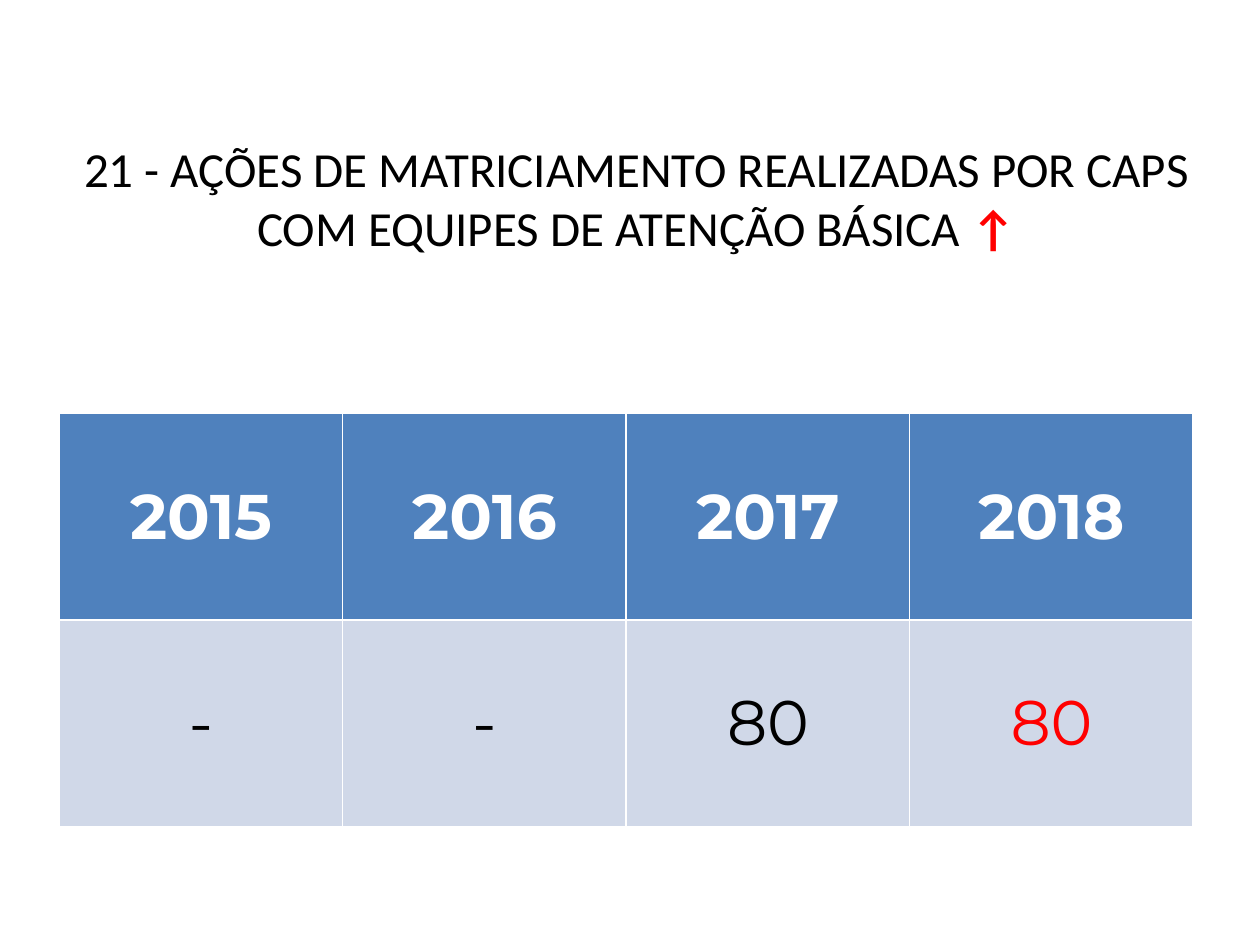
from pptx import Presentation
from pptx.dml.color import RGBColor
from pptx.enum.text import MSO_ANCHOR, PP_ALIGN
from pptx.util import Inches, Pt

BLACK, WHITE, RED = "000000", "FFFFFF", "FF0000"
HEADER_FILL, VALUE_FILL = "4F81BD", "D0D8E8"
YEARS = ["2015", "2016", "2017", "2018"]
ACTIONS = ["-", "-", "80", "80"]


def rgb(color):
    """Turn a hex string into a colour."""
    return RGBColor.from_string(color)


def format_run(run, font_name, size, color, bold=False):
    """Set the font of a run."""
    run.font.name = font_name
    run.font.size = Pt(size)
    run.font.bold = bold
    run.font.color.rgb = rgb(color)


def add_title(slide, indicator, trend):
    """Place the indicator name, followed by its trend arrow, in the title."""
    title = slide.shapes.title
    title.left, title.top = Inches(0.55), Inches(0.16)
    title.width, title.height = Inches(9), Inches(2.81)
    frame = title.text_frame
    frame.word_wrap = True
    frame.vertical_anchor = MSO_ANCHOR.MIDDLE
    paragraph = frame.paragraphs[0]
    paragraph.alignment = PP_ALIGN.CENTER
    for words, color, bold in ((indicator, BLACK, False), (trend, RED, True)):
        run = paragraph.add_run()
        run.text = words
        format_run(run, "Calibri", 28, color, bold)


def fill_cell(cell, value, fill, color, bold):
    """Write a centred value in a filled cell."""
    cell.fill.solid()
    cell.fill.fore_color.rgb = rgb(fill)
    cell.vertical_anchor = MSO_ANCHOR.MIDDLE
    paragraph = cell.text_frame.paragraphs[0]
    paragraph.text = value
    paragraph.alignment = PP_ALIGN.CENTER
    format_run(paragraph.runs[0], "Montserrat", 36, color, bold)


def add_yearly_table(slide):
    """Add the table of actions by year, with the latest value in red."""
    table = slide.shapes.add_table(
        2, len(YEARS), Inches(0.47), Inches(3.28), Inches(9), Inches(3.28)
    ).table
    for column, (year, actions) in enumerate(zip(YEARS, ACTIONS)):
        value_color = RED if column == len(YEARS) - 1 else BLACK
        fill_cell(table.cell(0, column), year, HEADER_FILL, WHITE, True)
        fill_cell(table.cell(1, column), actions, VALUE_FILL, value_color, False)


def main():
    """Build and save the slide."""
    presentation = Presentation()
    presentation.slide_width, presentation.slide_height = Inches(10), Inches(7.5)
    slide = presentation.slides.add_slide(presentation.slide_layouts[5])
    add_title(
        slide,
        "21 - AÇÕES DE MATRICIAMENTO REALIZADAS POR CAPS "
        "COM EQUIPES DE ATENÇÃO BÁSICA ",
        "↑",
    )
    add_yearly_table(slide)
    presentation.save("out.pptx")


if __name__ == "__main__":
    main()
